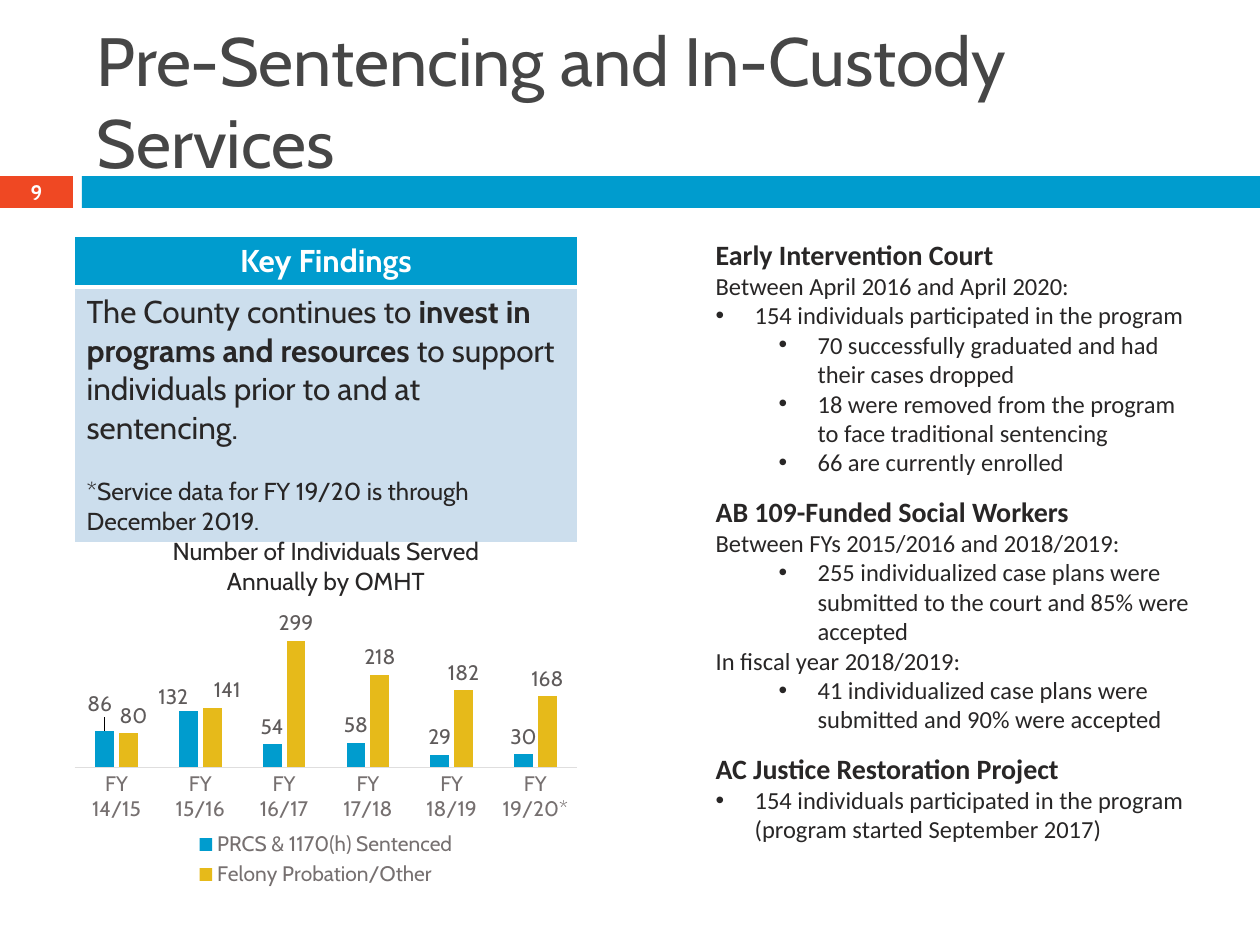
from dataclasses import dataclass
from lxml import etree
from pptx import Presentation
from pptx import util as u
from pptx.chart.data import CategoryChartData
from pptx.dml.color import RGBColor
from pptx.enum import chart as ch, shapes, text
from pptx.oxml import parse_xml
from pptx.oxml.ns import nsdecls, qn

PX = 914400 / 126
LEFT, MID = text.PP_ALIGN.LEFT, text.PP_ALIGN.CENTER


@dataclass(frozen=True)
class Theme:
    blue: str = "009CCE"
    pale: str = "CCDEED"
    gold: str = "E6BA1A"
    red: str = "EF4823"
    white: str = "FFFFFF"
    ink: str = "282626"
    title: str = "464646"
    axis: str = "767070"
    label: str = "5F5B5B"
    rule: str = "DFDEDE"
    face: str = "Cabin"
    plain: str = "Calibri"
    huge: float = 39
    big: float = 18
    head: float = 16
    body: float = 14
    small: float = 12


def px(*nums):
    return [u.Emu(round(n * PX)) for n in nums]


def put(obj, **vals):
    for key, val in vals.items():
        setattr(obj, key, val)


def tint(fill, hue):
    fill.solid()
    fill.fore_color.rgb = RGBColor.from_string(hue)


def style(font, size, hue, face, bold=False):
    put(font, size=u.Pt(size), name=face, bold=bold)
    font.color.rgb = RGBColor.from_string(hue)


def place(shape, box):
    put(shape, **dict(zip(("left", "top", "width", "height"), px(*box))))


def mark(para, left=0, hang=0):
    """Indent a paragraph in px, with a bullet when it hangs."""
    props = para._p.get_or_add_pPr()
    for key, val in zip(("marL", "indent"), px(left, -hang)):
        props.set(key, str(val))
    if hang:
        etree.SubElement(props, qn("a:buFont")).set("typeface", "Arial")
        etree.SubElement(props, qn("a:buChar")).set("char", "•")
    else:
        etree.SubElement(props, qn("a:buNone"))


def layout(x, y, extra=""):
    return parse_xml(f'<c:layout {nsdecls("c")}><c:manualLayout>{extra}'
                     f'<c:x val="{x}"/><c:y val="{y}"/></c:manualLayout></c:layout>')


class Page:
    def __init__(self, deck, theme):
        self.look = theme
        self.slide = deck.slides.add_slide(deck.slide_layouts[1])
        self.shapes = self.slide.shapes

    def frame(self, shape, anchor):
        put(shape.text_frame, word_wrap=True, vertical_anchor=anchor,
            auto_size=text.MSO_AUTO_SIZE.NONE)
        return shape.text_frame

    def say(self, para, runs, size, hue, face=None, align=LEFT):
        """Fill a paragraph from (words, bold) pairs."""
        para.alignment = align
        for words, bold in runs:
            run = para.add_run()
            run.text = words
            style(run.font, size, hue, face or self.look.face, bold)

    def title(self, words, box):
        shape = self.shapes.title
        place(shape, box)
        para = self.frame(shape, text.MSO_ANCHOR.MIDDLE).paragraphs[0]
        self.say(para, [(words, False)], self.look.huge, self.look.title)

    def bar(self, box, hue):
        shape = self.shapes.add_shape(shapes.MSO_SHAPE.RECTANGLE, *px(*box))
        shape.shadow.inherit = False
        tint(shape.fill, hue)
        shape.line.fill.background()

    def note(self, lines, box, size, hue, bold=False, anchor=text.MSO_ANCHOR.TOP):
        frame = self.frame(self.shapes.add_textbox(*px(*box)), anchor)
        for i, words in enumerate(lines):
            para = frame.add_paragraph() if i else frame.paragraphs[0]
            self.say(para, [(words, bold)], size, hue, align=MID)

    def outline(self, items, box):
        """Fill the body placeholder from (kind, words) pairs."""
        t = self.look
        shape = self.slide.placeholders[1]
        place(shape, box)
        frame = self.frame(shape, text.MSO_ANCHOR.TOP)
        dents = {"item": (39, 39), "sub": (102, 39)}
        for i, (kind, words) in enumerate(items):
            para = frame.add_paragraph() if i else frame.paragraphs[0]
            head = kind == "head"
            para.level = int(kind == "sub")
            para.space_before = u.Pt(10 if head and i else 0)
            mark(para, *dents.get(kind, (0, 0)))
            self.say(para, [(words, head)], t.head if head else t.body,
                     t.ink, t.plain)

    def cell(self, cell, hue, base):
        tint(cell.fill, hue)
        props = cell._tc.get_or_add_tcPr()
        for i, (side, wide) in enumerate(dict(L=1, R=1, T=1, B=base).items()):
            props.insert(i, parse_xml(
                f'<a:ln{side} {nsdecls("a")} w="{u.Pt(wide)}"><a:solidFill>'
                f'<a:srgbClr val="{self.look.white}"/></a:solidFill></a:ln{side}>'))
        return cell.text_frame.paragraphs[0]

    def table(self, head, runs, foot, box, rows):
        t = self.look
        grid = self.shapes.add_table(2, 1, *px(*box)).table
        for row, high in zip(grid.rows, px(*rows)):
            row.height = high
        top, main = grid.cell(0, 0), grid.cell(1, 0)
        self.say(self.cell(top, t.blue, 3), [(head, True)], t.big, t.white, align=MID)
        self.say(self.cell(main, t.pale, 1), runs, t.big, t.ink)
        para = main.text_frame.add_paragraph()
        para.space_before = u.Pt(17)
        self.say(para, [(foot, False)], t.body, t.ink)

    def chart(self, cats, sets, box):
        """Draw columns; each set is name, values, colour, label shifts in px."""
        t = self.look
        data = CategoryChartData()
        data.categories = cats
        for name, vals, *_ in sets:
            data.add_series(name, vals)
        chart = self.shapes.add_chart(
            ch.XL_CHART_TYPE.COLUMN_CLUSTERED, *px(*box), data).chart
        put(chart, has_title=False, has_legend=True)
        style(chart.font, 10, t.ink, t.face)
        put(chart.legend, position=ch.XL_LEGEND_POSITION.BOTTOM, include_in_layout=False)
        style(chart.legend.font, t.small, t.axis, t.face)
        put(chart.value_axis, visible=False, has_major_gridlines=False,
            minimum_scale=0, maximum_scale=350)
        axis = chart.category_axis
        axis.major_tick_mark = ch.XL_TICK_MARK.NONE
        style(axis.tick_labels.font, t.small, t.axis, t.face)
        tint(axis.format.line.fill, t.rule)
        axis.format.line.width = u.Pt(0.75)
        plot = chart.plots[0]
        put(plot, gap_width=219, overlap=-27, vary_by_categories=False)
        for series, (_, _, hue, moves) in zip(plot.series, sets):
            tint(series.format.fill, hue)
            labels = series.data_labels
            spots = [series.points[i].data_label for i in range(len(moves))]
            labels.show_value = True
            for label in [labels, *spots]:
                label.position = ch.XL_LABEL_POSITION.OUTSIDE_END
                style(label.font, t.small, t.label, t.face)
            marks = series._element.iter(qn("c:dLbl"))
            for node, (dx, dy) in zip(marks, moves):
                node.find(qn("c:idx")).addnext(
                    layout(round(dx / box[2], 2), round(dy / box[3], 2)))
        area = chart._chartSpace.chart.plotArea
        for old in area.findall(qn("c:layout")):
            area.remove(old)
        spot = layout(0, 0.06, '<c:layoutTarget val="inner"/>'
                      '<c:xMode val="edge"/><c:yMode val="edge"/>')
        for side, val in (("w", 1), ("h", 0.51)):
            etree.SubElement(spot[0], qn(f"c:{side}")).set("val", str(val))
        area.insert(0, spot)


def main():
    deck = Presentation()
    put(deck, slide_width=u.Inches(10), slide_height=u.Inches(7.5))
    t = Theme()
    page = Page(deck, t)
    page.bar((0, 176, 73, 32), t.red)
    page.bar((82, 176, 1178, 32), t.blue)
    page.title("Pre-Sentencing and In-Custody Services", (84, 32, 1124, 136))
    page.note(["9"], (0, 175, 73, 34), t.small, t.white, True, text.MSO_ANCHOR.MIDDLE)
    page.table("Key Findings", [
        ("The County continues to ", False),
        ("invest in programs and resources ", True),
        ("to support individuals prior to and at sentencing.", False),
    ], "*Service data for FY 19/20 is through December 2019.", (74, 236, 504, 305), (51, 254))
    years = ("14/15", "15/16", "16/17", "17/18", "18/19", "19/20*")
    page.chart([f"FY\n{year}" for year in years], [
        ("PRCS & 1170(h) Sentenced", (86, 132, 54, 58, 29, 30), t.blue, [(-6, -8), (-13, 3)]),
        ("Felony Probation/Other", (80, 141, 299, 218, 182, 168), t.gold, [(3, 0), (14, 0)]),
    ], (74, 602, 504, 290))
    page.note(["Number of Individuals Served", "Annually by OMHT"],
              (74, 530, 504, 72), t.body, t.ink)
    page.outline([
        ("head", "Early Intervention Court"),
        ("line", "Between April 2016 and April 2020:"),
        ("item", "154 individuals participated in the program"),
        ("sub", "70 successfully graduated and had their cases dropped"),
        ("sub", "18 were removed from the program to face traditional sentencing"),
        ("sub", "66 are currently enrolled"),
        ("head", "AB 109-Funded Social Workers"),
        ("line", "Between FYs 2015/2016 and 2018/2019:"),
        ("sub", "255 individualized case plans were submitted to the court and 85% were accepted"),
        ("line", "In fiscal year 2018/2019:"),
        ("sub", "41 individualized case plans were submitted and 90% were accepted"),
        ("head", "AC Justice Restoration Project"),
        ("item", "154 individuals participated in the program (program started September 2017)"),
    ], (703, 231, 504, 625))
    deck.save("out.pptx")


if __name__ == "__main__":
    main()
